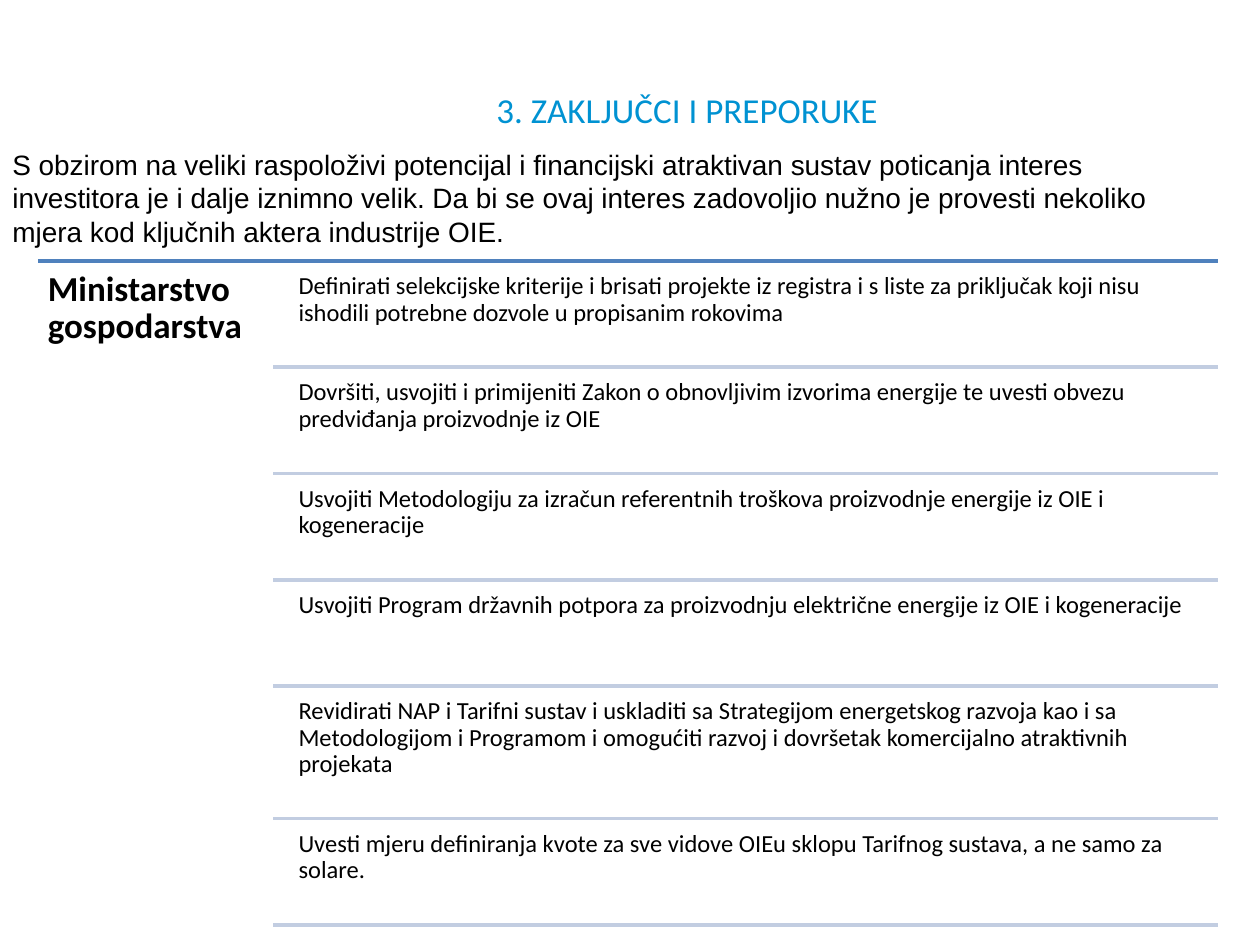
from pptx import Presentation
from pptx.dml.color import RGBColor
from pptx.enum.shapes import MSO_CONNECTOR
from pptx.enum.text import MSO_ANCHOR, MSO_AUTO_SIZE, PP_ALIGN
from pptx.oxml.ns import qn
from pptx.util import Inches, Pt
from lxml import etree

LEFT, TOP = PP_ALIGN.LEFT, MSO_ANCHOR.TOP
MIDDLE = MSO_ANCHOR.MIDDLE
STRAIGHT = MSO_CONNECTOR.STRAIGHT
NO_AUTOFIT, GROW = MSO_AUTO_SIZE.NONE, MSO_AUTO_SIZE.SHAPE_TO_FIT_TEXT
TITLE_ONLY = 5

COLORS = {"title": "0092D2", "text": "000000", "rule": "4F81BD", "divider": "C2CDE1"}

MEASURES = [
    "Definirati selekcijske kriterije i brisati projekte iz registra i s liste za "
    "priključak koji nisu ishodili potrebne dozvole u propisanim rokovima",
    "Dovršiti, usvojiti i primijeniti Zakon o obnovljivim izvorima energije te uvesti "
    "obvezu predviđanja proizvodnje iz OIE",
    "Usvojiti Metodologiju za izračun referentnih troškova proizvodnje energije iz OIE "
    "i kogeneracije",
    "Usvojiti Program državnih potpora za proizvodnju električne energije iz OIE i "
    "kogeneracije",
    "Revidirati NAP i Tarifni sustav i uskladiti sa Strategijom energetskog razvoja kao "
    "i sa Metodologijom i Programom i omogućiti razvoj i dovršetak komercijalno "
    "atraktivnih projekata",
    "Uvesti mjeru definiranja kvote za sve vidove OIEu sklopu Tarifnog sustava, a ne "
    "samo za solare.",
]
TALL_ROW, TALL_HEIGHT = 4, 1.01
LIST_LEFT, LIST_RIGHT = 0.3, 9.67
LIST_TOP, LIST_BOTTOM = 2.07, 7.34
DIVIDER_LEFT, MEASURE_LEFT, ROW_GAP = 2.17, 2.31, 0.04


class SlideBuilder:
    def __init__(self, slide):
        self.s = slide

    def add_run(self, tf, text, size, font="Calibri", color="text", bold=False, spacing=None):
        p = tf.paragraphs[0]
        p.alignment = LEFT
        if spacing:
            p.line_spacing = spacing
        r = p.add_run()
        r.text = text
        r.font.size = Pt(size)
        r.font.name = font
        r.font.bold = bold
        r.font.color.rgb = RGBColor.from_string(COLORS[color])

    def title(self, text, left, top, width, height):
        sp = self.s.shapes.title
        sp.left, sp.top = Inches(left), Inches(top)
        sp.width, sp.height = Inches(width), Inches(height)
        tf = sp.text_frame
        tf.auto_size = NO_AUTOFIT
        tf.vertical_anchor = MIDDLE
        self.add_run(tf, text, 20, color="title")

    def text(self, text, left, top, width, height, size, inset=None, auto_size=NO_AUTOFIT,
             **style):
        sp = self.s.shapes.add_textbox(Inches(left), Inches(top), Inches(width), Inches(height))
        tf = sp.text_frame
        tf.word_wrap = True
        tf.auto_size = auto_size
        tf.vertical_anchor = TOP
        if inset is not None:
            tf.margin_left = tf.margin_right = Inches(inset)
            tf.margin_top = tf.margin_bottom = Inches(inset)
        self.add_run(tf, text, size, **style)

    def rule(self, left, right, y, color):
        line = self.s.shapes.add_connector(
            STRAIGHT, Inches(left), Inches(y), Inches(right), Inches(y))
        line.line.color.rgb = RGBColor.from_string(COLORS[color])
        line.line.width = Pt(2)
        etree.SubElement(line._element.spPr, qn("a:effectLst"))

    def measures(self, items):
        """Stack the measures, each closed by a divider; one row is taller."""
        count = len(items)
        free = LIST_BOTTOM - LIST_TOP - TALL_HEIGHT - count * ROW_GAP
        row_height = free / (count - 1)
        y = LIST_TOP
        for i, item in enumerate(items):
            height = TALL_HEIGHT if i == TALL_ROW else row_height
            y += ROW_GAP
            self.text(item, MEASURE_LEFT, y, LIST_RIGHT - MEASURE_LEFT, height, 14,
                      inset=0.06, spacing=0.9)
            y += height
            self.rule(DIVIDER_LEFT, LIST_RIGHT, y, "divider")


def main():
    prs = Presentation()
    prs.slide_width, prs.slide_height = Inches(10), Inches(7.5)
    b = SlideBuilder(prs.slides.add_slide(prs.slide_layouts[TITLE_ONLY]))

    b.title("3. ZAKLJUČCI I PREPORUKE", 3.84, 0.62, 9, 0.5)
    b.text("S obzirom na veliki raspoloživi potencijal i financijski atraktivan sustav "
           "poticanja interes investitora je i dalje iznimno velik. Da bi se ovaj interes "
           "zadovoljio nužno je provesti nekoliko mjera kod ključnih aktera industrije OIE.",
           0, 1.12, 9.76, 0.91, 16, auto_size=GROW, font="Arial")
    b.rule(LIST_LEFT, LIST_RIGHT, LIST_TOP, "rule")
    b.text("Ministarstvo gospodarstva", LIST_LEFT, LIST_TOP, DIVIDER_LEFT - LIST_LEFT, 5.32,
           20, inset=0.08, bold=True, spacing=0.9)
    b.measures(MEASURES)

    prs.save("out.pptx")


if __name__ == "__main__":
    main()
